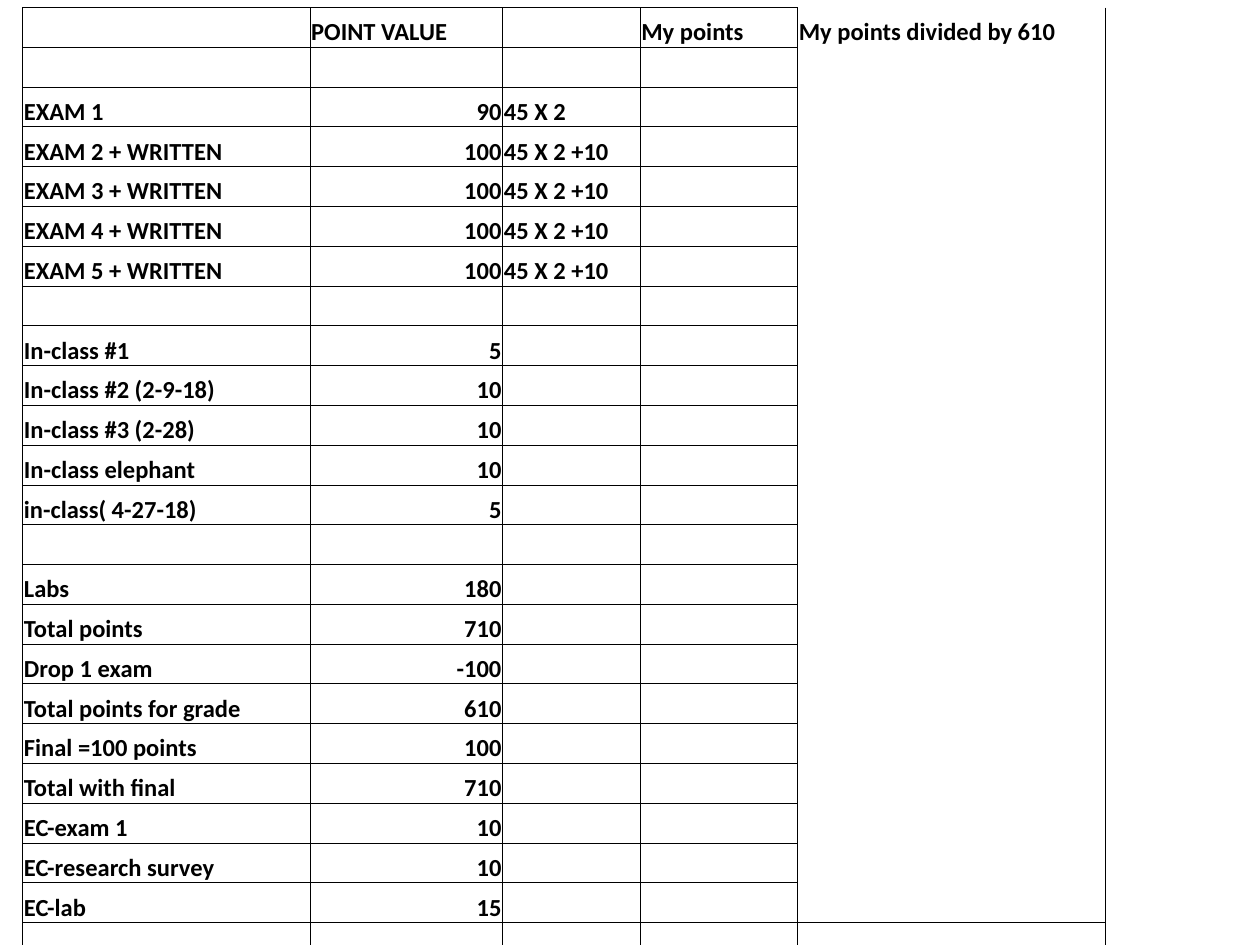
from lxml.etree import SubElement
from pptx import Presentation
from pptx.dml.color import RGBColor
from pptx.enum.text import MSO_ANCHOR as Anchor, PP_ALIGN as Align
from pptx.oxml.ns import qn
from pptx.util import Inches, Pt

COLORS = {"ink": "000000"}
FONT, SIZE = "Calibri", 14

# Grade sheet: item, point value, how it is made up, my points, my share
BLANK = ()
ROWS = [
    ("", "POINT VALUE", "", "My points", "My points divided by 610"),
    BLANK,
    ("EXAM 1", "90", "45 X 2"),
    *[(f"EXAM {number} + WRITTEN", "100", "45 X 2 +10") for number in range(2, 6)],
    BLANK,
    ("In-class #1", "5"),
    ("In-class #2 (2-9-18)", "10"),
    ("In-class #3 (2-28)", "10"),
    ("In-class elephant", "10"),
    ("in-class( 4-27-18)", "5"),
    BLANK,
    ("Labs", "180"),
    ("Total points", "710"),
    ("Drop 1 exam", "-100"),
    ("Total points for grade", "610"),
    ("Final =100 points", "100"),
    ("Total with final", "710"),
    ("EC-exam 1", "10"),
    ("EC-research survey", "10"),
    ("EC-lab", "15"),
    BLANK,
]
WIDTHS = [2.28, 1.53, 1.09, 1.25, 2.44]
HEIGHT = 7.58
LAST_ROW, LAST_COLUMN = len(ROWS) - 1, len(WIDTHS) - 1


def set_borders(cell, sides):
    """Draw thin lines on the named sides (of L, R, T, B), none on the others."""
    properties = cell._tc.get_or_add_tcPr()
    for side in "LRTB":
        line = SubElement(properties, qn(f"a:ln{side}"), w=str(Pt(0.5)))
        if side in sides:
            fill = SubElement(line, qn("a:solidFill"))
            SubElement(fill, qn("a:srgbClr"), val=COLORS["ink"])
        else:
            SubElement(line, qn("a:noFill"))


def write_cell(cell, text, align=Align.LEFT):
    cell.vertical_anchor = Anchor.BOTTOM
    cell.margin_left = cell.margin_right = cell.margin_top = Inches(0.01)
    cell.margin_bottom = 0
    para = cell.text_frame.paragraphs[0]
    para.alignment = align
    if not text:
        # An empty cell keeps the text size, so its row does not grow
        SubElement(para._p, qn("a:endParaRPr"), sz=str(SIZE * 100))
        return
    span = para.add_run()
    span.text = text
    span.font.name, span.font.size, span.font.bold = FONT, Pt(SIZE), True
    span.font.color.rgb = RGBColor.from_string(COLORS["ink"])


deck = Presentation()
deck.slide_width, deck.slide_height = Inches(10), Inches(7.5)
page = deck.slides.add_slide(deck.slide_layouts[6])

# Table frame
table = page.shapes.add_table(
    len(ROWS), len(WIDTHS), Inches(0.18), Inches(0.06), Inches(sum(WIDTHS)), Inches(HEIGHT)
).table
table.first_row = table.horz_banding = False
for column, width in zip(table.columns, WIDTHS):
    column.width = Inches(width)
for row in table.rows:
    row.height = Inches(HEIGHT / len(ROWS))

# Cells: the last column is open, with one line above its bottom cell
for r, values in enumerate(ROWS):
    for c in range(len(WIDTHS)):
        cell = table.cell(r, c)
        sides = "LRTB"
        if c == LAST_COLUMN and r < LAST_ROW:
            sides = "LRB" if r == LAST_ROW - 1 else "LR"
        set_borders(cell, sides)
        cell.fill.background()
        text = values[c] if c < len(values) else ""
        write_cell(cell, text, Align.RIGHT if c == 1 and r > 0 else Align.LEFT)

deck.save("out.pptx")
